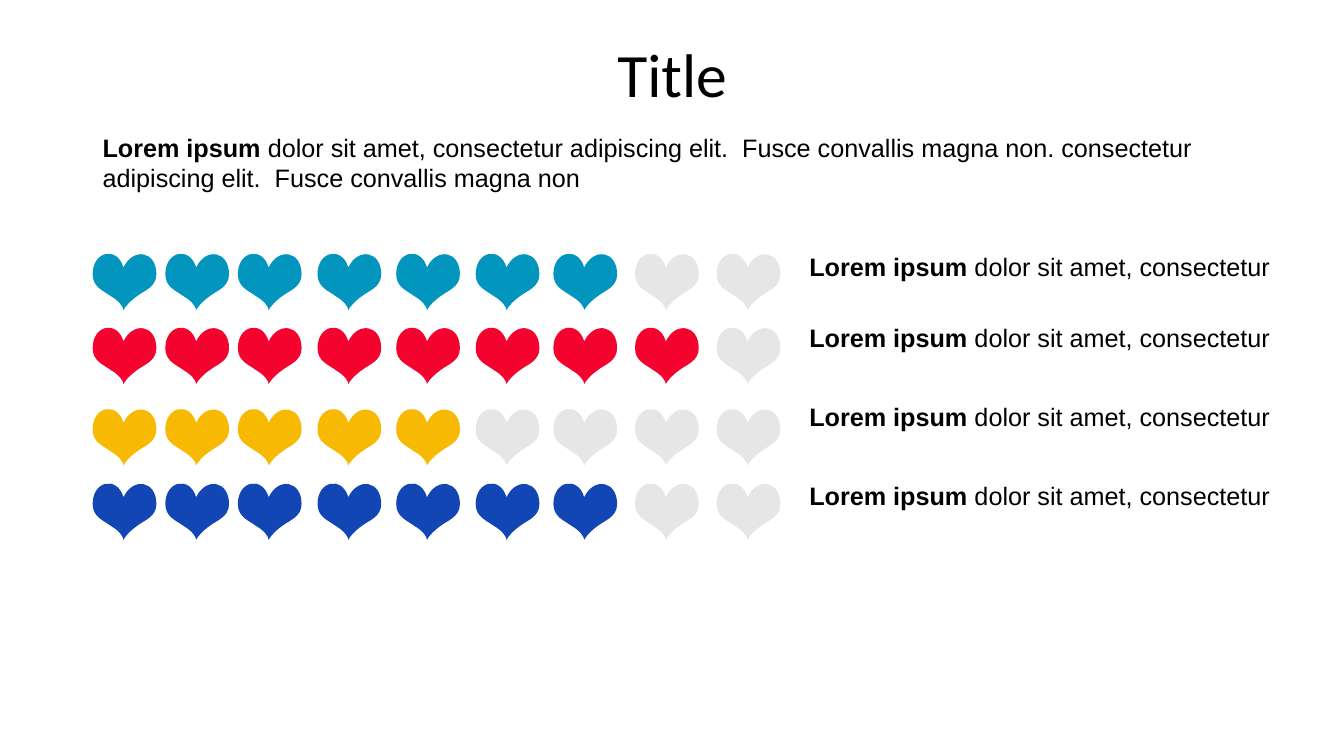
from lxml import etree
from pptx import Presentation
from pptx.dml.color import RGBColor
from pptx.enum.text import MSO_ANCHOR, MSO_AUTO_SIZE, PP_ALIGN
from pptx.oxml.ns import qn
from pptx.util import Pt

MIDDLE = MSO_ANCHOR.MIDDLE
TOP = MSO_ANCHOR.TOP
GROW = MSO_AUTO_SIZE.SHAPE_TO_FIT_TEXT
FIXED = MSO_AUTO_SIZE.NONE
CENTER = PP_ALIGN.CENTER
LEFT = PP_ALIGN.LEFT

BLACK = RGBColor(0x00, 0x00, 0x00)
TEAL = RGBColor(0x02, 0x95, 0xBE)
RED = RGBColor(0xF4, 0x03, 0x2E)
YELLOW = RGBColor(0xF7, 0xB9, 0x02)
BLUE = RGBColor(0x12, 0x46, 0xB4)
GREY = RGBColor(0xE6, 0xE6, 0xE6)

TITLE = "Title"
LEAD = "Lorem ipsum "
INTRO = (
    "dolor sit amet, consectetur adipiscing elit.  Fusce convallis magna non. "
    "consectetur adipiscing elit.  Fusce convallis magna non"
)
LABEL = "dolor sit amet, consectetur"

RATINGS = [
    {"color": TEAL, "filled": 7, "heart_top": 175.7, "label_top": 175.7},
    {"color": RED, "filled": 8, "heart_top": 228.5, "label_top": 226.8},
    {"color": YELLOW, "filled": 5, "heart_top": 286.6, "label_top": 283},
    {"color": BLUE, "filled": 7, "heart_top": 339.8, "label_top": 339.8},
]
HEART_LEFTS = [66.2, 118.1, 169.9, 226.8, 283, 339.8, 395.3, 453.6, 511.9]

HEART_START = (22, 15.4)
HEART_CURVES = [
    ((17.5, 0), (0, 3.6), (0, 20.2)),
    ((0, 29.5), (7.5, 31.8), (13.2, 36)),
    ((18.9, 39.3), (22, 43.6), (22, 45.8)),
    ((23, 43.6), (26.8, 39.3), (31.8, 35.8)),
    ((36.9, 31.8), (45.5, 29.5), (45.5, 20.2)),
    ((45.5, 3.6), (29, 0.8), HEART_START),
]

TITLE_FONT = {"name": "Calibri", "size": Pt(44), "bold": False}
BOLD_FONT = {"name": "Arial", "size": Pt(18), "bold": True}
BODY_FONT = {"name": "Arial", "size": Pt(18), "bold": False}

TITLE_FRAME = {"word_wrap": True, "auto_size": FIXED, "vertical_anchor": MIDDLE}
INTRO_FRAME = {"word_wrap": True, "auto_size": GROW, "vertical_anchor": TOP}
LABEL_FRAME = {"word_wrap": False, "auto_size": GROW, "vertical_anchor": TOP}


def set_attributes(target, values):
    for name, value in values.items():
        setattr(target, name, value)


def curve_segments(shape):
    lines = list(shape.element.iter(qn("a:lnTo")))
    for index in range(0, len(lines), 3):
        curve = etree.Element(qn("a:cubicBezTo"))
        lines[index].addprevious(curve)
        for line in lines[index:index + 3]:
            curve.append(line[0])
            line.getparent().remove(line)


def add_heart(shapes, left, top, color):
    points = [(Pt(left + x), Pt(top + y)) for curve in HEART_CURVES for x, y in curve]
    builder = shapes.build_freeform(*points[-1])
    builder.add_line_segments(points, close=True)
    heart = builder.convert_to_shape()
    curve_segments(heart)
    heart.shadow.inherit = False
    heart.fill.solid()
    heart.fill.fore_color.rgb = color
    heart.line.fill.background()


def add_text(slide, box, runs, frame_format, paragraph_format):
    shape = slide.shapes.add_textbox(*(Pt(length) for length in box))
    set_attributes(shape.text_frame, frame_format)
    paragraph = shape.text_frame.paragraphs[0]
    set_attributes(paragraph, paragraph_format)
    for text, font_format in runs:
        run = paragraph.add_run()
        run.text = text
        set_attributes(run.font, font_format)
        run.font.color.rgb = BLACK


def main():
    presentation = Presentation()
    presentation.slide_width = Pt(960)
    presentation.slide_height = Pt(540)
    slide = presentation.slides.add_slide(presentation.slide_layouts[6])

    add_text(slide, (66.2, 28.8, 828, 53.3), [(TITLE, TITLE_FONT)],
             TITLE_FRAME, {"alignment": CENTER, "line_spacing": 0.9})
    add_text(slide, (66.2, 90.7, 856.8, 51.1), [(LEAD, BOLD_FONT), (INTRO, BODY_FONT)],
             INTRO_FRAME, {"alignment": LEFT})

    for rating in RATINGS:
        row = slide.shapes.add_group_shape()
        for index, left in enumerate(HEART_LEFTS):
            color = rating["color"] if index < rating["filled"] else GREY
            add_heart(row.shapes, left, rating["heart_top"], color)
        add_text(slide, (571, rating["label_top"], 352, 29),
                 [(LEAD, BOLD_FONT), (LABEL, BODY_FONT)],
                 LABEL_FRAME, {"alignment": LEFT})

    presentation.save("out.pptx")


if __name__ == "__main__":
    main()
